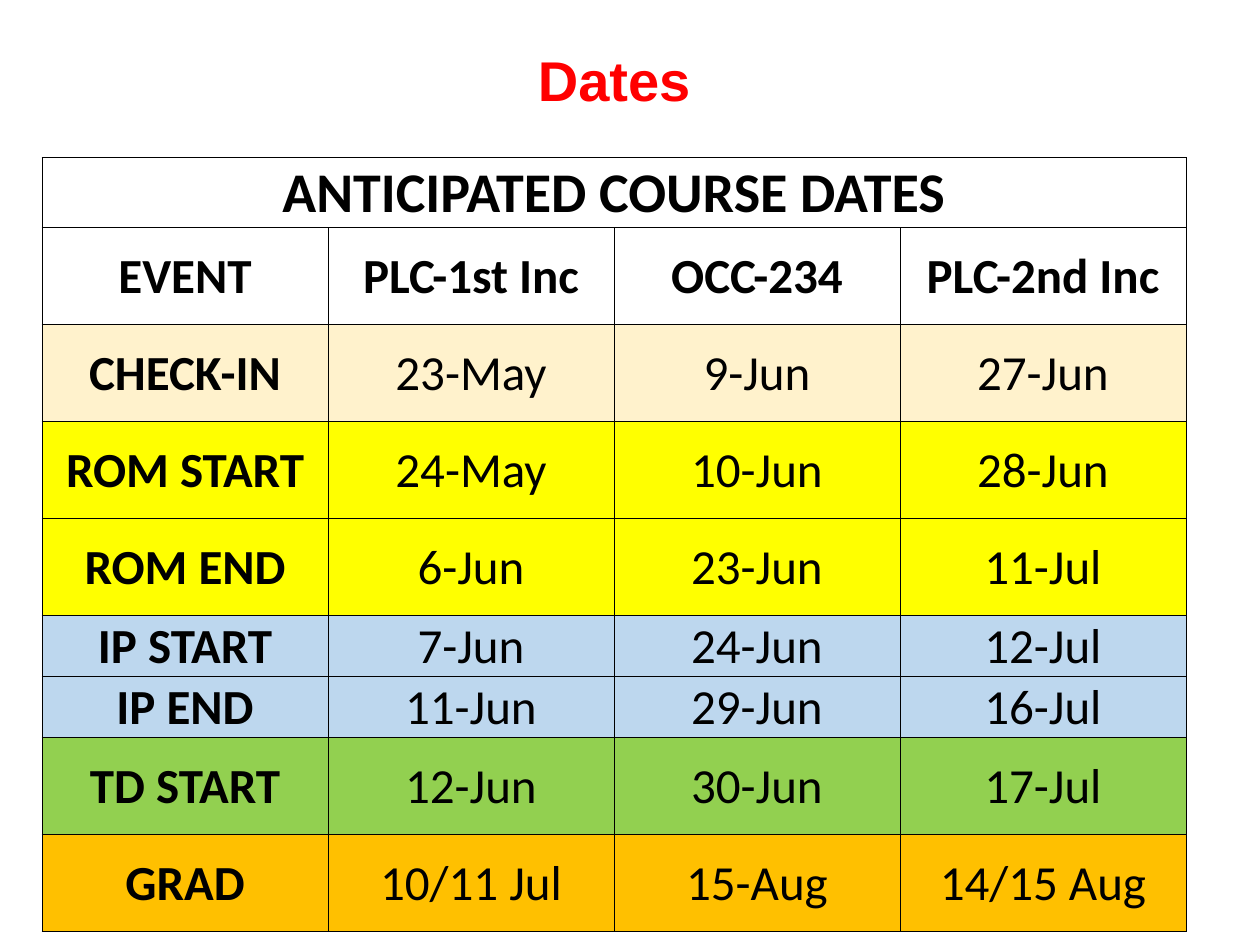
import pptx
import pptx.dml.color
import pptx.enum.text
import pptx.oxml.ns
import pptx.util
from lxml import etree

Pt = pptx.util.Pt
CENTER = pptx.enum.text.PP_ALIGN.CENTER
MIDDLE = pptx.enum.text.MSO_ANCHOR.MIDDLE

TITLE = "Dates"
CAPTION = "ANTICIPATED COURSE DATES"
HEADINGS = ("EVENT", "PLC-1st Inc", "OCC-234", "PLC-2nd Inc")
TALL, SHORT, CAPTION_HEIGHT = 55.4, 35, 40
EVENTS = [  # event and its dates, fill, row height
    (("CHECK-IN", "23-May", "9-Jun", "27-Jun"), "FFF2CC", TALL),
    (("ROM START", "24-May", "10-Jun", "28-Jun"), "FFFF00", TALL),
    (("ROM END", "6-Jun", "23-Jun", "11-Jul"), "FFFF00", TALL),
    (("IP START", "7-Jun", "24-Jun", "12-Jul"), "BDD7EE", SHORT),
    (("IP END", "11-Jun", "29-Jun", "16-Jul"), "BDD7EE", SHORT),
    (("TD START", "12-Jun", "30-Jun", "17-Jul"), "92D050", TALL),
    (("GRAD", "10/11 Jul", "15-Aug", "14/15 Aug"), "FFC000", TALL),
]
ROWS = [
    ((CAPTION, "", "", ""), None, CAPTION_HEIGHT),
    (HEADINGS, None, TALL),
] + EVENTS
TABLE_LEFT, TABLE_TOP, COLUMN_WIDTH = 24, 90, 163.44


def rgb(color):
    return pptx.dml.color.RGBColor.from_string(color)


def write(frame, text, size, font_name, color, bold):
    paragraph = frame.paragraphs[0]
    paragraph.alignment = CENTER
    run = paragraph.add_run()
    run.text = text
    run.font.size = Pt(size)
    run.font.name = font_name
    run.font.bold = bold
    run.font.color.rgb = rgb(color)


def add_borders(cell, color="000000", width=0.5):
    properties = cell._tc.get_or_add_tcPr()
    qn = pptx.oxml.ns.qn
    for side in ("lnL", "lnR", "lnT", "lnB"):
        line = etree.SubElement(properties, qn(f"a:{side}"), w=str(Pt(width)))
        fill = etree.SubElement(line, qn("a:solidFill"))
        etree.SubElement(fill, qn("a:srgbClr"), val=color)


def format_cell(cell, fill):
    add_borders(cell)
    cell.vertical_anchor = MIDDLE
    cell.margin_left = cell.margin_right = cell.margin_top = Pt(0.7)
    cell.margin_bottom = 0
    if fill:
        cell.fill.solid()
        cell.fill.fore_color.rgb = rgb(fill)
    else:
        cell.fill.background()


def add_title(slide):
    title = slide.shapes.title
    title.left, title.top, title.width, title.height = Pt(84), Pt(24), Pt(534), Pt(42)
    title.text_frame.vertical_anchor = MIDDLE
    write(title.text_frame, TITLE, 32, "Arial", "FF0000", True)


def add_dates(slide):
    columns = len(HEADINGS)
    table = slide.shapes.add_table(
        len(ROWS), columns, Pt(TABLE_LEFT), Pt(TABLE_TOP),
        Pt(columns * COLUMN_WIDTH), Pt(sum(height for _, _, height in ROWS)),
    ).table
    table.first_row = table.horz_banding = False
    for column in table.columns:
        column.width = Pt(COLUMN_WIDTH)
    table.cell(0, 0).merge(table.cell(0, columns - 1))

    for r, (texts, fill, height) in enumerate(ROWS):
        table.rows[r].height = Pt(height)
        for c, text in enumerate(texts):
            cell = table.cell(r, c)
            format_cell(cell, fill)
            if text:
                size = 32 if r == 0 else 28
                bold = r < 2 or c == 0
                write(cell.text_frame, text, size, "Calibri", "000000", bold)


def main():
    presentation = pptx.Presentation()
    presentation.slide_width, presentation.slide_height = Pt(720), Pt(540)
    slide = presentation.slides.add_slide(presentation.slide_layouts[5])
    add_title(slide)
    add_dates(slide)
    presentation.save("out.pptx")


if __name__ == "__main__":
    main()
